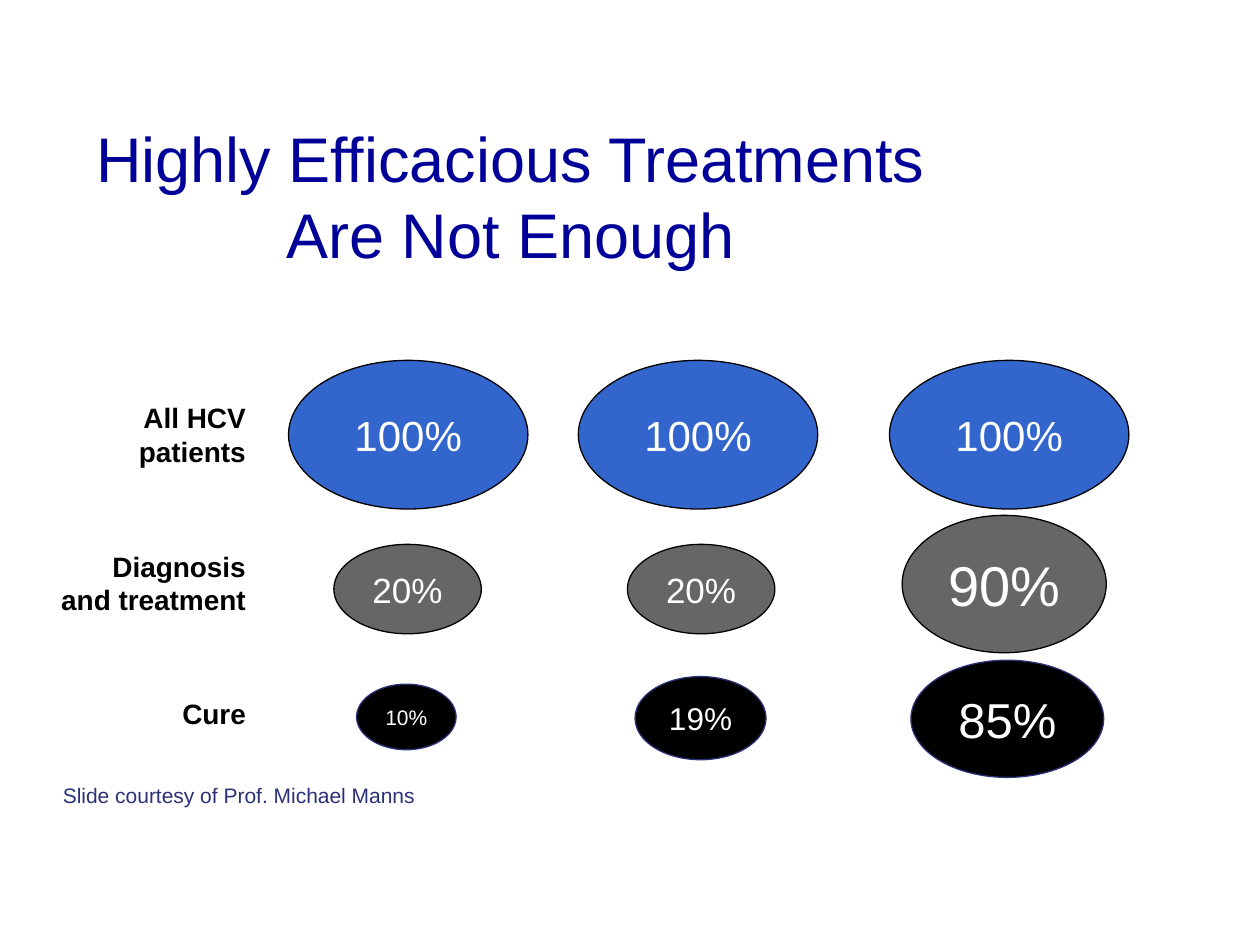
"""Build the slide on treatment coverage in three groups of HCV patients."""
import dataclasses
import typing

import pptx
import pptx.dml.color
import pptx.enum.shapes
import pptx.enum.text
import pptx.util

SCALE = 9144
FONT = "Arial"
HUES = {
    "blue": "3366CC", "gray": "666666", "black": "000000",
    "white": "FFFFFF", "navy": "2A3177", "title": "000099",
}
ALIGN = pptx.enum.text.PP_ALIGN
ANCHOR = pptx.enum.text.MSO_ANCHOR


@dataclasses.dataclass(frozen=True)
class Box:
    left: int
    top: int
    width: int
    height: int

    def emu(self) -> list[int]:
        return [px * SCALE for px in dataclasses.astuple(self)]


@dataclasses.dataclass(frozen=True)
class Style:
    size: int
    hue: str
    align: typing.Any = ALIGN.CENTER
    anchor: typing.Any = ANCHOR.MIDDLE
    bold: bool = False


@dataclasses.dataclass(frozen=True)
class Oval:
    box: Box
    text: str
    size: int


@dataclasses.dataclass(frozen=True)
class Row:
    label: str
    box: Box
    fill: str
    line: str
    ovals: tuple[Oval, ...]


ROWS = (
    Row("All HCV\npatients", Box(35, 313, 170, 64), "blue", "black",
        tuple(Oval(Box(left, 286, 190, 118), "100%", 24) for left in (229, 459, 706))),
    Row("Diagnosis\nand treatment", Box(35, 431, 170, 64), "gray", "black", (
        Oval(Box(265, 432, 117, 71), "20%", 20),
        Oval(Box(498, 432, 117, 71), "20%", 20),
        Oval(Box(716, 409, 162, 109), "90%", 32),
    )),
    Row("Cure", Box(35, 548, 170, 37), "black", "navy", (
        Oval(Box(283, 543, 79, 52), "10%", 12),
        Oval(Box(504, 537, 104, 66), "19%", 18),
        Oval(Box(723, 524, 153, 93), "85%", 28),
    )),
)


def tint(name: str) -> pptx.dml.color.RGBColor:
    return pptx.dml.color.RGBColor.from_string(HUES[name])


def write(shape: typing.Any, text: str, style: Style) -> None:
    frame = shape.text_frame
    frame.word_wrap = True
    frame.vertical_anchor = style.anchor
    frame.text = text
    for para in frame.paragraphs:
        para.alignment = style.align
        font = para.font
        font.name = FONT
        font.size = pptx.util.Pt(style.size)
        font.bold = style.bold
        font.color.rgb = tint(style.hue)


def note(slide: typing.Any, box: Box, text: str, style: Style) -> typing.Any:
    shape = slide.shapes.add_textbox(*box.emu())
    write(shape, text, style)
    return shape


def draw(slide: typing.Any, row: Row) -> None:
    note(slide, row.box, row.label, Style(16, "black", ALIGN.RIGHT, ANCHOR.TOP, True))
    for oval in row.ovals:
        shape = slide.shapes.add_shape(
            pptx.enum.shapes.MSO_SHAPE.OVAL, *oval.box.emu())
        shape.shadow.inherit = False
        shape.fill.solid()
        shape.fill.fore_color.rgb = tint(row.fill)
        shape.line.color.rgb = tint(row.line)
        shape.line.width = pptx.util.Pt(0.75)
        write(shape, oval.text, Style(oval.size, "white"))


def main() -> None:
    deck = pptx.Presentation()
    deck.slide_width, deck.slide_height = 1000 * SCALE, 750 * SCALE
    slide = deck.slides.add_slide(deck.slide_layouts[6])
    title = note(slide, Box(50, 108, 714, 94),
                 "Highly Efficacious Treatments Are Not Enough", Style(36, "title"))
    title.text_frame.margin_left = 6 * SCALE
    for row in ROWS:
        draw(slide, row)
    note(slide, Box(40, 616, 392, 30), "Slide courtesy of Prof. Michael Manns",
         Style(12, "navy", ALIGN.LEFT, ANCHOR.TOP))
    deck.save("out.pptx")


if __name__ == "__main__":
    main()
